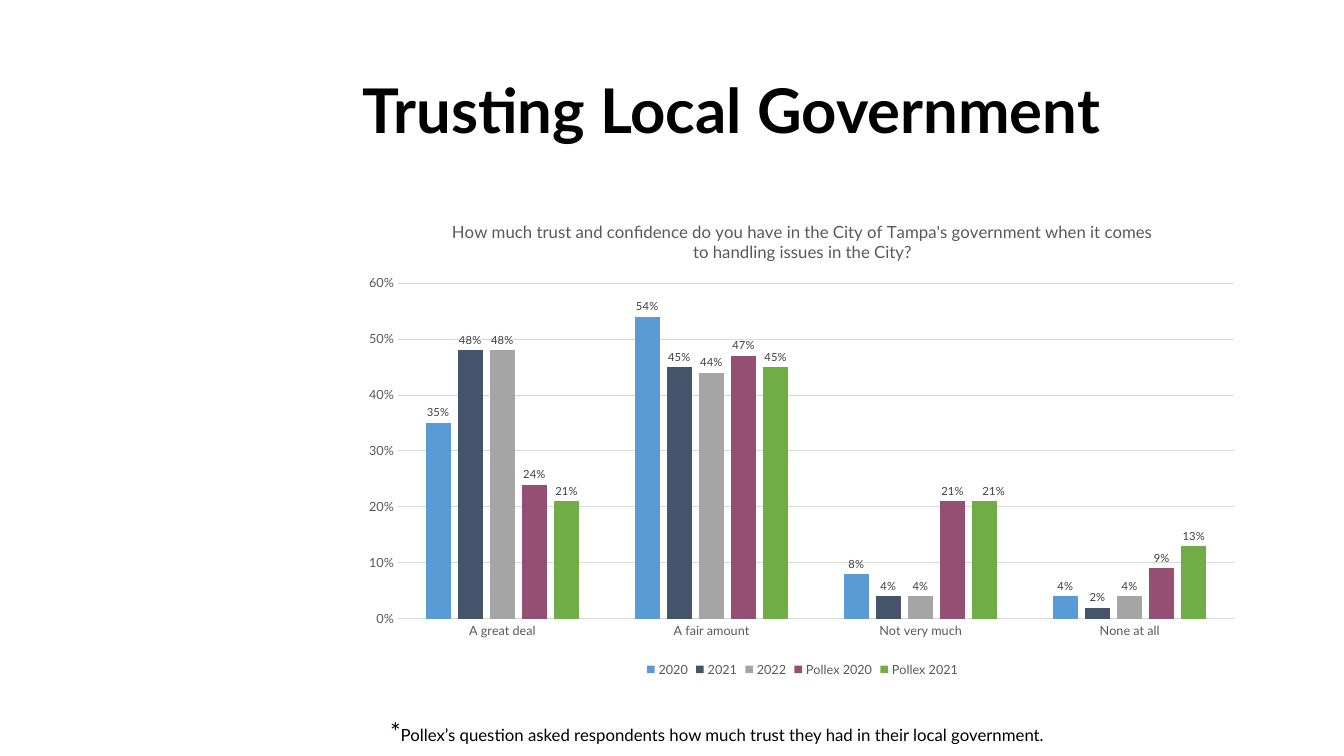
"""Build the slide on trust in local government with its clustered column chart."""
from lxml.etree import fromstring
from pptx import Presentation
from pptx.chart.data import CategoryChartData
from pptx.dml.color import RGBColor
from pptx.enum.chart import XL_CHART_TYPE, XL_LABEL_POSITION, XL_LEGEND_POSITION, XL_TICK_MARK
from pptx.enum.text import MSO_ANCHOR
from pptx.oxml.ns import nsdecls, qn
from pptx.util import Inches, Pt


def style(font, size, color, bold=False):
    values = {"name": "Lato", "size": Pt(size), "bold": bold}
    for key, value in values.items():
        setattr(font, key, value)
    font.color.rgb = RGBColor.from_string(color)


def place(parent, index, **values):
    for old in parent.findall(qn("c:layout")):
        parent.remove(old)
    items = "".join(f'<c:{key} val="{value}"/>' for key, value in values.items())
    parent.insert(index, fromstring(
        f'<c:layout {nsdecls("c")}><c:manualLayout>{items}</c:manualLayout></c:layout>'))


prs = Presentation()
prs.slide_width, prs.slide_height = Inches(13.33), Inches(7.5)
s = prs.slides.add_slide(prs.slide_layouts[6])

texts = [
    ((3.5, 0.4, 8.92, 1.45), MSO_ANCHOR.MIDDLE, 0.9,
     [("Trusting Local Government", 44, True)]),
    ((3.77, 7.06, 8.37, 0.4), MSO_ANCHOR.TOP, 1.0,
     [("*", 18, False),
      ("Pollex’s question asked respondents how much trust they had in their local government.",
       12, False)]),
]
for box, anchor, spacing, runs in texts:
    tf = s.shapes.add_textbox(*map(Inches, box)).text_frame
    tf.word_wrap = True
    tf.vertical_anchor = anchor
    p = tf.paragraphs[0]
    p.line_spacing = spacing
    for text, size, bold in runs:
        r = p.add_run()
        r.text = text
        style(r.font, size, "000000", bold)

series = [
    ("2020", "5B9BD5", (0.35, 0.54, 0.08, 0.04)),
    ("2021", "44546A", (0.48, 0.45, 0.04, 0.02)),
    ("2022", "A5A5A5", (0.48, 0.44, 0.04, 0.04)),
    ("Pollex 2020", "954F72", (0.24, 0.47, 0.21, 0.09)),
    ("Pollex 2021", "70AD47", (0.21, 0.45, 0.21, 0.13)),
]
data = CategoryChartData(number_format="0%")
data.categories = ["A great deal", "A fair amount", "Not very much", "None at all"]
for name, color, values in series:
    data.add_series(name, values)
chart = s.shapes.add_chart(
    XL_CHART_TYPE.COLUMN_CLUSTERED,
    *map(Inches, (3.5, 2, 8.92, 4.76)), data).chart
style(chart.font, 10, "000000")

tf = chart.chart_title.text_frame
tf.text = ("How much trust and confidence do you have in the City of Tampa's government "
           "when it comes to handling issues in the City?")
style(tf.paragraphs[0].runs[0].font, 12, "595959")
chart.chart_title.include_in_layout = False

chart.has_legend = True
chart.legend.position = XL_LEGEND_POSITION.BOTTOM
chart.legend.include_in_layout = False
style(chart.legend.font, 9, "595959")

category_axis, value_axis = chart.category_axis, chart.value_axis
for axis in (category_axis, value_axis):
    axis.major_tick_mark = axis.minor_tick_mark = XL_TICK_MARK.NONE
    style(axis.tick_labels.font, 9, "595959")
value_axis.minimum_scale, value_axis.maximum_scale, value_axis.major_unit = 0, 0.6, 0.1
value_axis.tick_labels.number_format = "0%"
value_axis.tick_labels.number_format_is_linked = False
value_axis.format.line.fill.background()
for line in (category_axis.format.line, value_axis.major_gridlines.format.line):
    line.color.rgb = RGBColor.from_string("D9D9D9")
    line.width = Pt(0.75)

plot = chart.plots[0]
plot.gap_width, plot.overlap, plot.vary_by_categories = 219, -27, False
for bars, (name, color, values) in zip(plot.series, series):
    bars.format.fill.solid()
    bars.format.fill.fore_color.rgb = RGBColor.from_string(color)
    bars.invert_if_negative = False
    labels = bars.data_labels
    labels.show_value = True
    labels.number_format, labels.number_format_is_linked = "0%", False
    labels.position = XL_LABEL_POSITION.OUTSIDE_END
    style(labels.font, 8, "404040")

label = plot.series[4].points[2].data_label
label.position = XL_LABEL_POSITION.OUTSIDE_END
style(label.font, 8, "404040")
place(plot.series[4].data_labels._element.find(qn("c:dLbl")), 1, x=0.01, y=0)
place(chart._chartSpace.chart.plotArea, 0, layoutTarget="inner", xMode="edge", yMode="edge",
      x=0.05, y=0.17, w=0.93, h=0.7)

prs.save("out.pptx")
